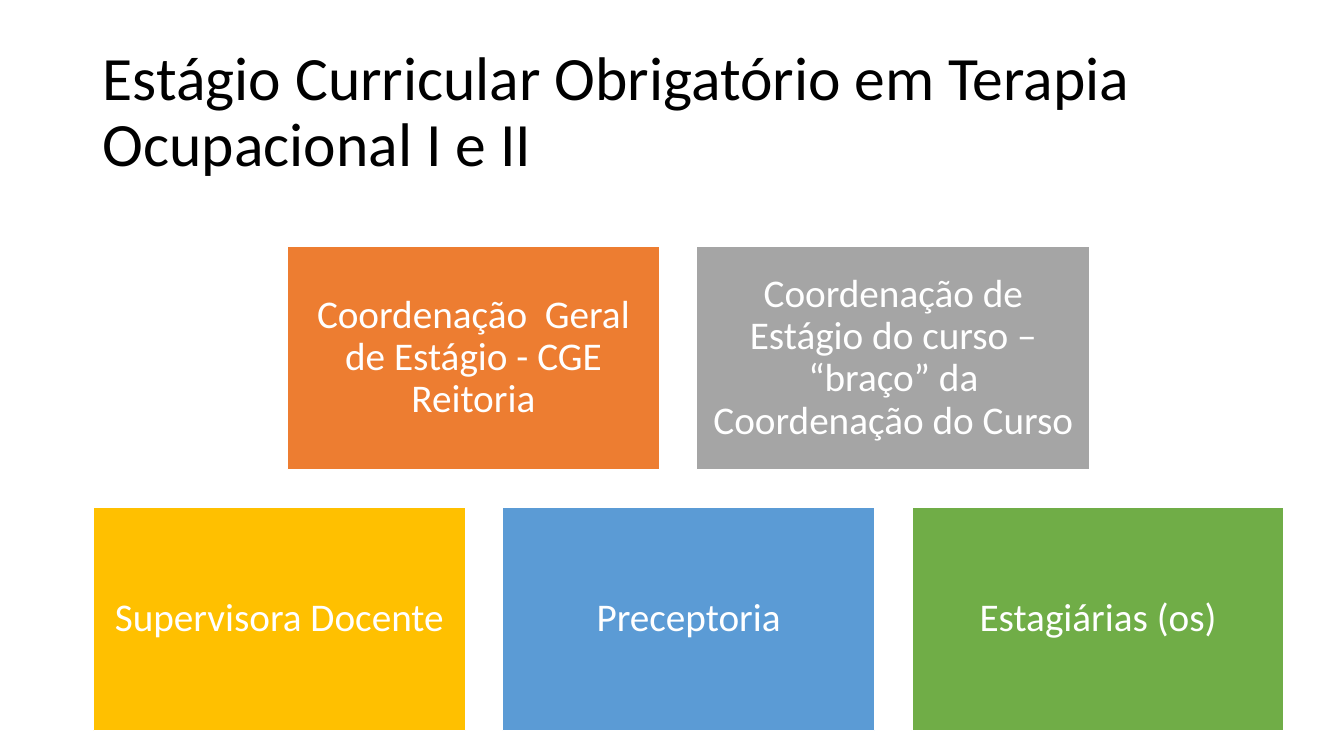
from dataclasses import dataclass

from pptx import Presentation
from pptx.dml.color import RGBColor
from pptx.enum.shapes import MSO_SHAPE
from pptx.enum.text import MSO_ANCHOR, MSO_AUTO_SIZE, PP_ALIGN
from pptx.util import Inches, Pt


@dataclass(frozen=True)
class Theme:
    font: str = "Calibri"
    title_size: int = 44
    role_size: int = 28
    black: str = "000000"
    white: str = "FFFFFF"
    orange: str = "ED7D31"
    gray: str = "A5A5A5"
    gold: str = "FFC000"
    blue: str = "5B9BD5"
    green: str = "70AD47"


theme = Theme()


def format_text(frame, size, color, alignment):
    frame.word_wrap = True
    frame.auto_size = MSO_AUTO_SIZE.NONE
    frame.vertical_anchor = MSO_ANCHOR.MIDDLE
    paragraph = frame.paragraphs[0]
    paragraph.alignment = alignment
    paragraph.line_spacing = 0.9
    font = paragraph.runs[0].font
    font.name = theme.font
    font.size = Pt(size)
    font.color.rgb = RGBColor.from_string(color)


presentation = Presentation()
presentation.slide_width = Inches(13.33)
presentation.slide_height = Inches(7.5)
slide = presentation.slides.add_slide(presentation.slide_layouts[5])

title = slide.shapes.title
title.left, title.top = Inches(0.92), Inches(0.4)
title.width, title.height = Inches(11.5), Inches(1.45)
title.text_frame.text = "Estágio Curricular Obrigatório em Terapia Ocupacional I e II"
format_text(title.text_frame, theme.title_size, theme.black, PP_ALIGN.LEFT)

role_rows = [
    [
        ("Coordenação  Geral de Estágio - CGE Reitoria", theme.orange, 3.69),
        ("Coordenação de Estágio do curso – “braço” da Coordenação do Curso", theme.gray, 3.9),
    ],
    [
        ("Supervisora Docente", theme.gold, 3.69),
        ("Preceptoria", theme.blue, 3.69),
        ("Estagiárias (os)", theme.green, 3.69),
    ],
]
center, top, height, gap = 6.83, 2.44, 2.22, 0.37

for row in role_rows:
    row_width = sum(width for _, _, width in row) + gap * (len(row) - 1)
    left = center - row_width / 2
    for label, color, width in row:
        role = slide.shapes.add_shape(
            MSO_SHAPE.RECTANGLE, Inches(left), Inches(top), Inches(width), Inches(height)
        )
        role.shadow.inherit = False
        role.fill.solid()
        role.fill.fore_color.rgb = RGBColor.from_string(color)
        role.line.color.rgb = RGBColor.from_string(theme.white)
        role.line.width = Pt(1)
        frame = role.text_frame
        frame.margin_left = frame.margin_right = Inches(0.12)
        frame.margin_top = frame.margin_bottom = Inches(0.12)
        frame.text = label
        format_text(frame, theme.role_size, theme.white, PP_ALIGN.CENTER)
        left += width + gap
    top += height + gap

presentation.save("out.pptx")
